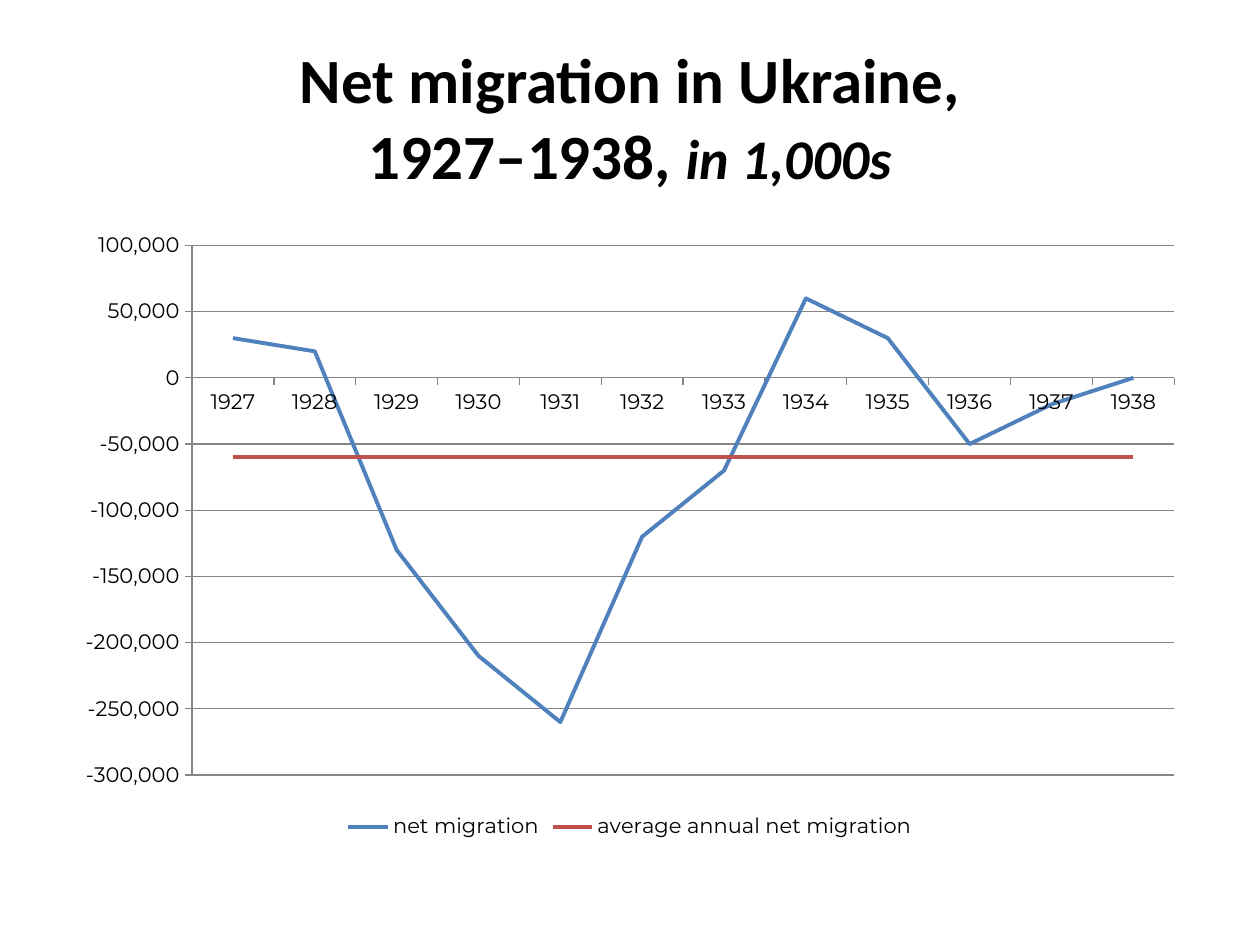
from pptx import Presentation
from pptx.chart.data import CategoryChartData
from pptx.dml.color import RGBColor
from pptx.enum.chart import XL_CHART_TYPE, XL_LEGEND_POSITION, XL_TICK_MARK
from pptx.enum.text import MSO_ANCHOR, PP_ALIGN
from pptx.util import Pt

BLACK = RGBColor(0x00, 0x00, 0x00)
GRAY = RGBColor(0x86, 0x86, 0x86)
BLUE = RGBColor(0x4F, 0x81, 0xBD)
RED = RGBColor(0xC0, 0x50, 0x4D)

YEARS = range(1927, 1939)
NET = [30000, 20000, -130000, -210000, -260000, -120000,
       -70000, 60000, 30000, -50000, -20000, 0]
MEAN = -60000


def add_title(slide, left, top, width, height):
    box = slide.shapes.add_textbox(Pt(left), Pt(top), Pt(width), Pt(height))
    frame = box.text_frame
    frame.word_wrap = True
    frame.vertical_anchor = MSO_ANCHOR.MIDDLE
    para = frame.paragraphs[0]
    para.alignment = PP_ALIGN.CENTER
    para.font.name = "Calibri"
    para.font.bold = True
    para.font.color.rgb = BLACK

    # Heading on two lines, ending in the unit
    head = para.add_run()
    head.text = "Net migration in Ukraine,"
    para.add_line_break()
    span = para.add_run()
    span.text = "1927–1938, "
    unit = para.add_run()
    unit.text = "in 1,000s"
    unit.font.italic = True
    for run, size in ((head, 36), (span, 36), (unit, 32)):
        run.font.size = Pt(size)


def set_font(font, size, name):
    font.size = Pt(size)
    font.name = name
    font.color.rgb = BLACK


def add_lines(slide, left, top, width, height):
    data = CategoryChartData(number_format="#,##0")
    data.categories = [str(year) for year in YEARS]
    data.add_series("net migration", NET)
    data.add_series("average annual net migration", [MEAN] * len(YEARS))
    chart = slide.shapes.add_chart(
        XL_CHART_TYPE.LINE, Pt(left), Pt(top), Pt(width), Pt(height), data
    ).chart
    chart.has_title = False
    set_font(chart.font, 10, "Calibri")

    # Axes and gridlines
    for axis in (chart.category_axis, chart.value_axis):
        axis.major_tick_mark = XL_TICK_MARK.OUTSIDE
        axis.minor_tick_mark = XL_TICK_MARK.NONE
        axis.format.line.color.rgb = GRAY
        axis.format.line.width = Pt(0.75)
        set_font(axis.tick_labels.font, 12, "Montserrat")
    scale = chart.value_axis
    scale.minimum_scale = -300000
    scale.maximum_scale = 100000
    scale.major_unit = 50000
    scale.tick_labels.number_format = "#,##0"
    scale.tick_labels.number_format_is_linked = False
    scale.has_major_gridlines = True
    scale.major_gridlines.format.line.color.rgb = GRAY
    scale.major_gridlines.format.line.width = Pt(0.75)

    # Legend
    chart.has_legend = True
    chart.legend.position = XL_LEGEND_POSITION.BOTTOM
    chart.legend.include_in_layout = False
    set_font(chart.legend.font, 12, "Montserrat")

    # Series lines
    chart.plots[0].vary_by_categories = False
    for series, color in zip(chart.plots[0].series, (BLUE, RED)):
        series.smooth = False
        series.format.line.color.rgb = color
        series.format.line.width = Pt(2.25)


def main():
    deck = Presentation()
    deck.slide_width, deck.slide_height = Pt(720), Pt(540)
    slide = deck.slides.add_slide(deck.slide_layouts[6])
    add_title(slide, 36, 21.6, 648, 90)
    add_lines(slide, 36, 126, 648, 356.4)
    deck.save("out.pptx")


if __name__ == "__main__":
    main()
